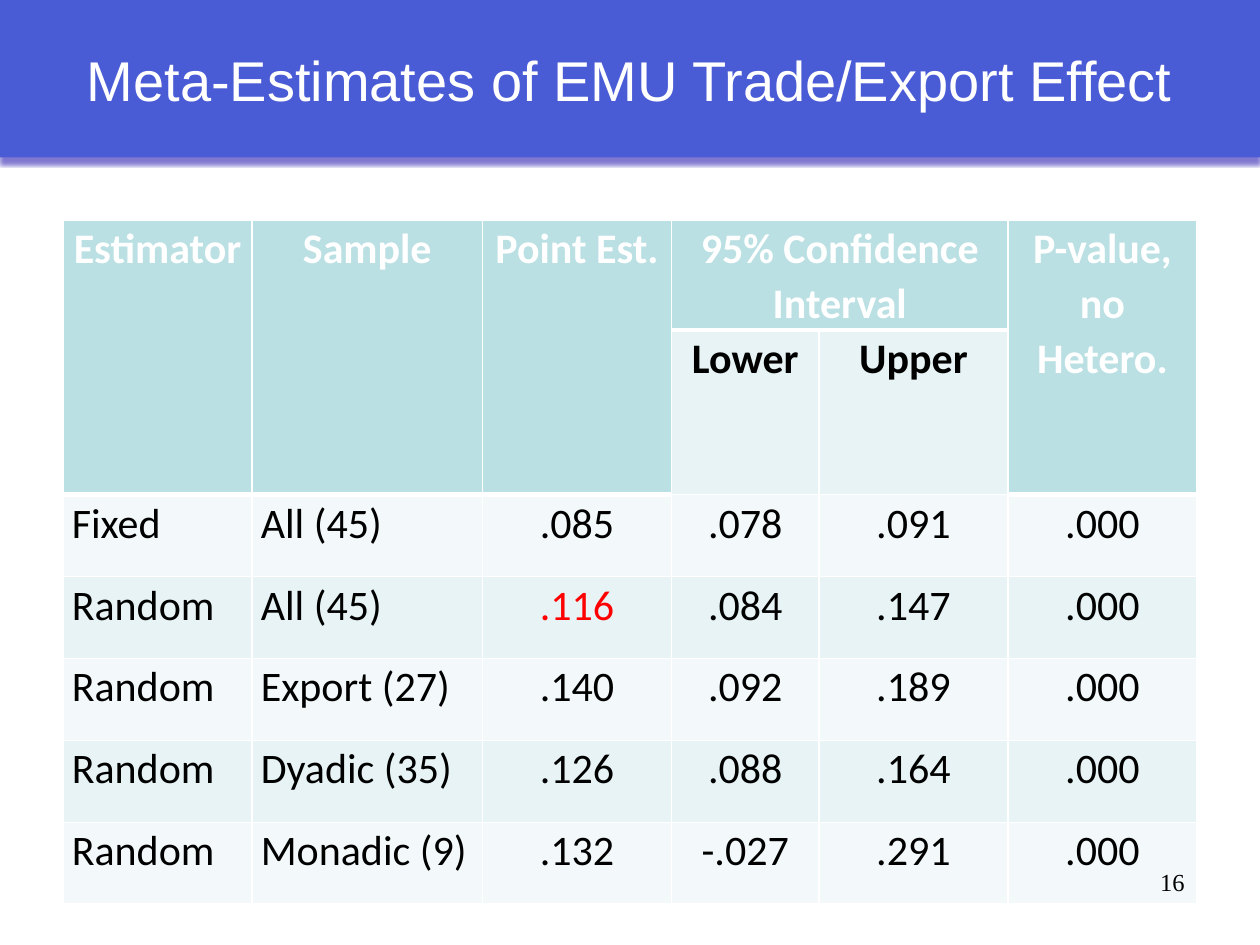
from lxml import etree
from pptx import Presentation
from pptx import util as u
from pptx.dml.color import RGBColor
from pptx.enum import shapes, text
from pptx.oxml import ns

COLORS = {
    "banner": "4A5BD6", "shadow": "8078D0", "header": "BBE0E3",
    "band": "E7F3F4", "plain": "F3F9FA", "white": "FFFFFF",
    "black": "000000", "highlight": "FF0000",
}
COLUMN_WIDTHS = [1.5, 1.83, 1.5, 1.17, 1.5, 1.5]
ROW_HEIGHTS = [0.65, 0.87] + [0.65] * 5
HEADER = ["Estimator", "Sample", "Point Est.", "95% Confidence Interval", "",
          "P-value, no Hetero."]
SUBHEADER = ["", "", "", "Lower", "Upper", ""]
ESTIMATES = [
    ["Fixed", "All (45)", ".085", ".078", ".091", ".000"],
    ["Random", "All (45)", ".116", ".084", ".147", ".000"],
    ["Random", "Export (27)", ".140", ".092", ".189", ".000"],
    ["Random", "Dyadic (35)", ".126", ".088", ".164", ".000"],
    ["Random", "Monadic (9)", ".132", "-.027", ".291", ".000"],
]
HIGHLIGHTED = (3, 2)
ALIGN = text.PP_ALIGN


def rgb(name):
    return RGBColor.from_string(COLORS[name])


def write(frame, words, align, color, spacing=None, **font):
    paragraph = frame.paragraphs[0]
    paragraph.alignment = align
    if spacing:
        paragraph.line_spacing = spacing
    run = paragraph.add_run()
    run.text = words
    run.font.color.rgb = rgb(color)
    for attribute, value in font.items():
        setattr(run.font, attribute, value)


def add_title(slide):
    banner = slide.shapes.add_shape(
        shapes.MSO_SHAPE.RECTANGLE, 0, 0, u.Inches(10), u.Inches(1.25))
    banner.fill.solid()
    banner.fill.fore_color.rgb = rgb("banner")
    banner.line.fill.background()

    # Soft shadow under the banner
    banner.shadow.inherit = False
    effects = banner.element.spPr.find(ns.qn("a:effectLst"))
    shadow = etree.SubElement(effects, ns.qn("a:outerShdw"), blurRad="25400",
                              dist="50800", dir="5400000", rotWithShape="0")
    etree.SubElement(shadow, ns.qn("a:srgbClr"), val=COLORS["shadow"])

    banner.text_frame.vertical_anchor = text.MSO_ANCHOR.MIDDLE
    write(banner.text_frame, "Meta-Estimates of EMU Trade/Export Effect",
          ALIGN.CENTER, "white", name="Arial", size=u.Pt(32))


def set_borders(cell, bottom):
    properties = cell._tc.get_or_add_tcPr()
    for side, points in {"L": 1, "R": 1, "T": 1, "B": bottom}.items():
        line = etree.SubElement(properties, ns.qn("a:ln" + side),
                                w=str(u.Pt(points)))
        fill = etree.SubElement(line, ns.qn("a:solidFill"))
        etree.SubElement(fill, ns.qn("a:srgbClr"), val=COLORS["white"])


def fill_cell(cell, row, column, words):
    in_header = row == 0 or (row == 1 and column not in (3, 4))
    set_borders(cell, 3 if in_header else 1)
    cell.fill.solid()
    cell.fill.fore_color.rgb = rgb(
        "header" if in_header else "band" if row % 2 else "plain")
    margins = {"margin_left": 0.07, "margin_right": 0.07,
               "margin_top": 0, "margin_bottom": 0}
    for attribute, value in margins.items():
        setattr(cell, attribute, u.Inches(value))
    if words:
        color = ("white" if in_header else
                 "highlight" if (row, column) == HIGHLIGHTED else "black")
        align = ALIGN.LEFT if row > 1 and column < 2 else ALIGN.CENTER
        write(cell.text_frame, words, align, color, spacing=1.07,
              name="Calibri", size=u.Pt(24), bold=row < 2)


def add_estimates(slide):
    contents = [HEADER, SUBHEADER] + ESTIMATES
    table = slide.shapes.add_table(
        len(contents), len(HEADER), u.Inches(0.5), u.Inches(1.75),
        u.Inches(9), u.Inches(4.94)).table
    table.first_row = table.horz_banding = False
    for column, width in zip(table.columns, COLUMN_WIDTHS):
        column.width = u.Inches(width)
    for row, height in zip(table.rows, ROW_HEIGHTS):
        row.height = u.Inches(height)

    # Two-level header
    for column in (0, 1, 2, 5):
        table.cell(0, column).merge(table.cell(1, column))
    table.cell(0, 3).merge(table.cell(0, 4))

    for row, entries in enumerate(contents):
        for column, words in enumerate(entries):
            fill_cell(table.cell(row, column), row, column, words)


def add_page_number(slide):
    number = slide.shapes.add_textbox(
        u.Inches(7.17), u.Inches(6.83), u.Inches(2.33), u.Inches(0.52))
    number.text_frame.word_wrap = True
    write(number.text_frame, "16", ALIGN.RIGHT, "black",
          name="Times New Roman", size=u.Pt(14))


def main():
    deck = Presentation()
    deck.slide_width, deck.slide_height = u.Inches(10), u.Inches(7.5)
    slide = deck.slides.add_slide(deck.slide_layouts[6])
    add_title(slide)
    add_estimates(slide)
    add_page_number(slide)
    deck.save("out.pptx")


if __name__ == "__main__":
    main()
